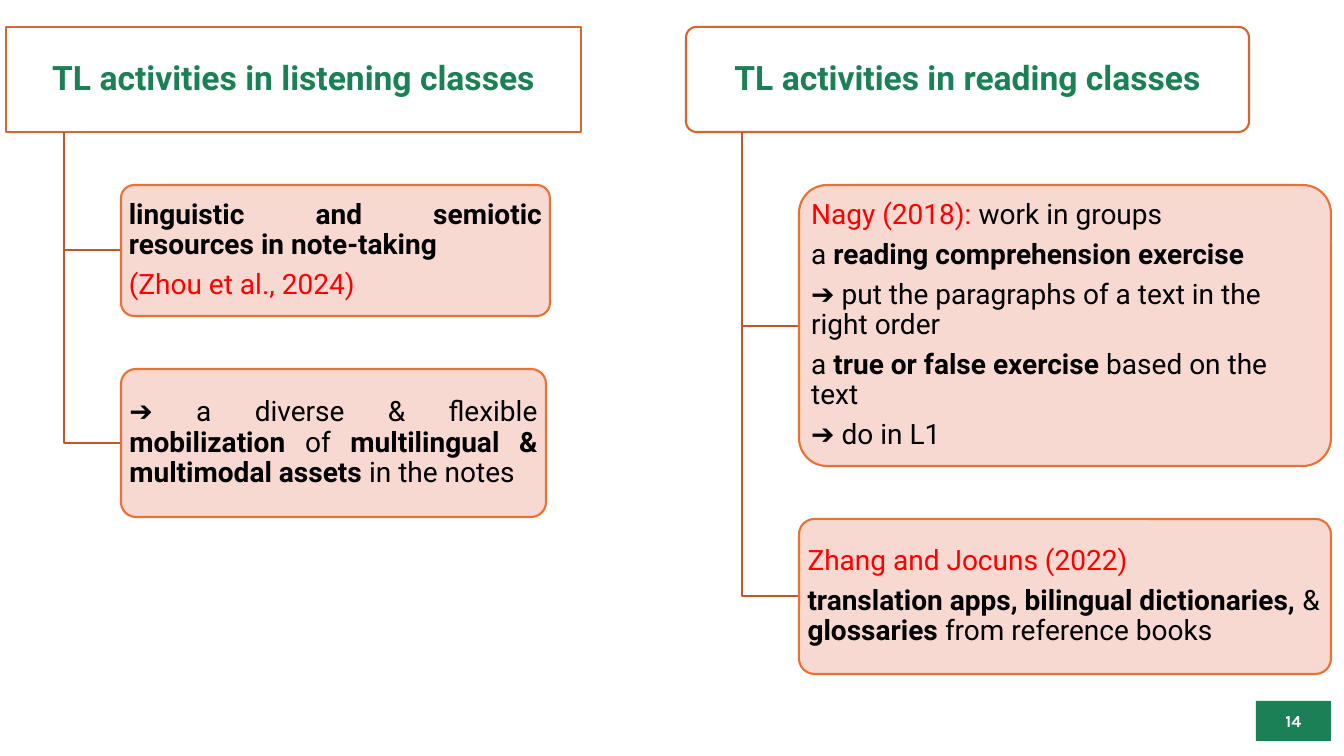
import pptx
import pptx.util
import pptx.dml.color
import pptx.enum.shapes
import pptx.enum.text
import pptx.oxml
import pptx.oxml.ns
import lxml.etree

PX = 914400 / 100.8
LEFT = pptx.enum.text.PP_ALIGN.LEFT
CENTER = pptx.enum.text.PP_ALIGN.CENTER
JUSTIFY = pptx.enum.text.PP_ALIGN.JUSTIFY
GREEN, RED, BLACK, WHITE = "1B8056", "FF0000", "000000", "FFFFFF"


def paint(target, colour):
    if hasattr(target, "solid"):
        target.solid()
        target = target.fore_color
    target.rgb = pptx.dml.color.RGBColor.from_string(colour)


def write(shape, paragraphs, size=20, font="Roboto", align=LEFT, spacing=0.9, after=7):
    frame = shape.text_frame
    frame.word_wrap = True
    frame.auto_size = pptx.enum.text.MSO_AUTO_SIZE.NONE
    frame.vertical_anchor = pptx.enum.text.MSO_ANCHOR.MIDDLE
    frame.margin_left = frame.margin_right = round(4 * PX)
    frame.margin_top = frame.margin_bottom = round(3 * PX)
    for index, spans in enumerate(paragraphs):
        para = frame.add_paragraph() if index else frame.paragraphs[0]
        para.alignment = align
        para.line_spacing = spacing
        para.space_before = pptx.util.Pt(0)
        para.space_after = pptx.util.Pt(after)
        for text, colour, bold in spans:
            span = para.add_run()
            span.text = text
            span.font.name = font
            span.font.size = pptx.util.Pt(size)
            span.font.bold = bold
            paint(span.font.fill, colour)


deck = pptx.Presentation()
deck.slide_width = round(1344 * PX)
deck.slide_height = round(756 * PX)
page = deck.slides.add_slide(deck.slide_layouts.get_by_name("Comparison"))
for placeholder in list(page.placeholders):
    if placeholder.placeholder_format.idx > 1:
        placeholder.element.getparent().remove(placeholder.element)

HEADING_TOP, HEADING_HEIGHT = 27, 105
HEADING_BOTTOM = HEADING_TOP + HEADING_HEIGHT
branches = [
    {
        "placeholder": page.shapes.title,
        "heading": "TL activities in listening classes",
        "left": 6, "width": 575, "trunk": 64, "box_left": 121, "align": JUSTIFY,
        "boxes": [
            (185, 429, 131, [
                [("linguistic and semiotic resources in note-taking ", BLACK, True)],
                [("(Zhou et al., 2024) ", RED, False)],
            ]),
            (369, 425, 148, [
                [("➔ a diverse & flexible ", BLACK, False),
                 ("mobilization", BLACK, True),
                 (" of ", BLACK, False),
                 ("multilingual & multimodal assets", BLACK, True),
                 (" in the notes", BLACK, False)],
            ]),
        ],
    },
    {
        "placeholder": page.placeholders[1],
        "heading": "TL activities in reading classes",
        "left": 686, "width": 563, "trunk": 742, "box_left": 799, "align": LEFT,
        "boxes": [
            (185, 532, 281, [
                [("Nagy (2018):", RED, False), (" work in groups", BLACK, False)],
                [("a ", BLACK, False), ("reading comprehension exercise", BLACK, True)],
                [("➔ put the paragraphs of a text in the right order", BLACK, False)],
                [("a ", BLACK, False),
                 ("true or false exercise ", BLACK, True),
                 ("based on the text", BLACK, False)],
                [("➔ do in L1", BLACK, False)],
            ]),
            (519, 532, 155, [
                [("Zhang and Jocuns (2022)", RED, False)],
                [("translation apps, bilingual dictionaries, ", BLACK, True),
                 ("& ", BLACK, False),
                 ("glossaries ", BLACK, True),
                 ("from reference books", BLACK, False)],
            ]),
        ],
    },
]

for branch in branches:
    heading = branch["placeholder"]
    heading.left, heading.top = round(branch["left"] * PX), round(HEADING_TOP * PX)
    heading.width, heading.height = round(branch["width"] * PX), round(HEADING_HEIGHT * PX)
    heading.element.spPr.insert(1, pptx.oxml.parse_xml(
        f'<a:prstGeom {pptx.oxml.ns.nsdecls("a")} prst="roundRect">'
        '<a:avLst><a:gd name="adj" fmla="val 10000"/></a:avLst></a:prstGeom>'))
    paint(heading.fill, WHITE)
    paint(heading.line.fill, "D3672D")
    heading.line.width = pptx.util.Pt(1.5)
    write(heading, [[(branch["heading"], GREEN, True)]], size=24, align=CENTER)

    for top, width, height, paragraphs in branch["boxes"]:
        middle = top + height / 2
        outline = page.shapes.build_freeform(branch["trunk"], HEADING_BOTTOM, scale=PX)
        outline.add_line_segments(
            [(branch["trunk"], middle), (branch["box_left"], middle)], close=False)
        elbow = outline.convert_to_shape()
        elbow.shadow.inherit = False
        elbow.fill.background()
        paint(elbow.line.fill, "BB5A28")
        elbow.line.width = pptx.util.Pt(1.5)

        box = page.shapes.add_shape(
            pptx.enum.shapes.MSO_SHAPE.ROUNDED_RECTANGLE,
            *(round(length * PX) for length in (branch["box_left"], top, width, height)))
        box.adjustments[0] = 0.1
        box.shadow.inherit = False
        paint(box.fill, "F7D5CE")
        tint = box.element.spPr.find(".//" + pptx.oxml.ns.qn("a:srgbClr"))
        lxml.etree.SubElement(tint, pptx.oxml.ns.qn("a:alpha"), val="90000")
        paint(box.line.fill, "E97132")
        box.line.width = pptx.util.Pt(1.5)
        write(box, paragraphs, align=branch["align"])

number = page.shapes.add_shape(
    pptx.enum.shapes.MSO_SHAPE.RECTANGLE,
    *(round(length * PX) for length in (1256, 701, 75, 40)))
number.shadow.inherit = False
paint(number.fill, GREEN)
number.line.fill.background()
write(number, [[("14", WHITE, True)]], size=12, font="Karla", align=CENTER, spacing=1.0, after=0)

deck.save("out.pptx")
